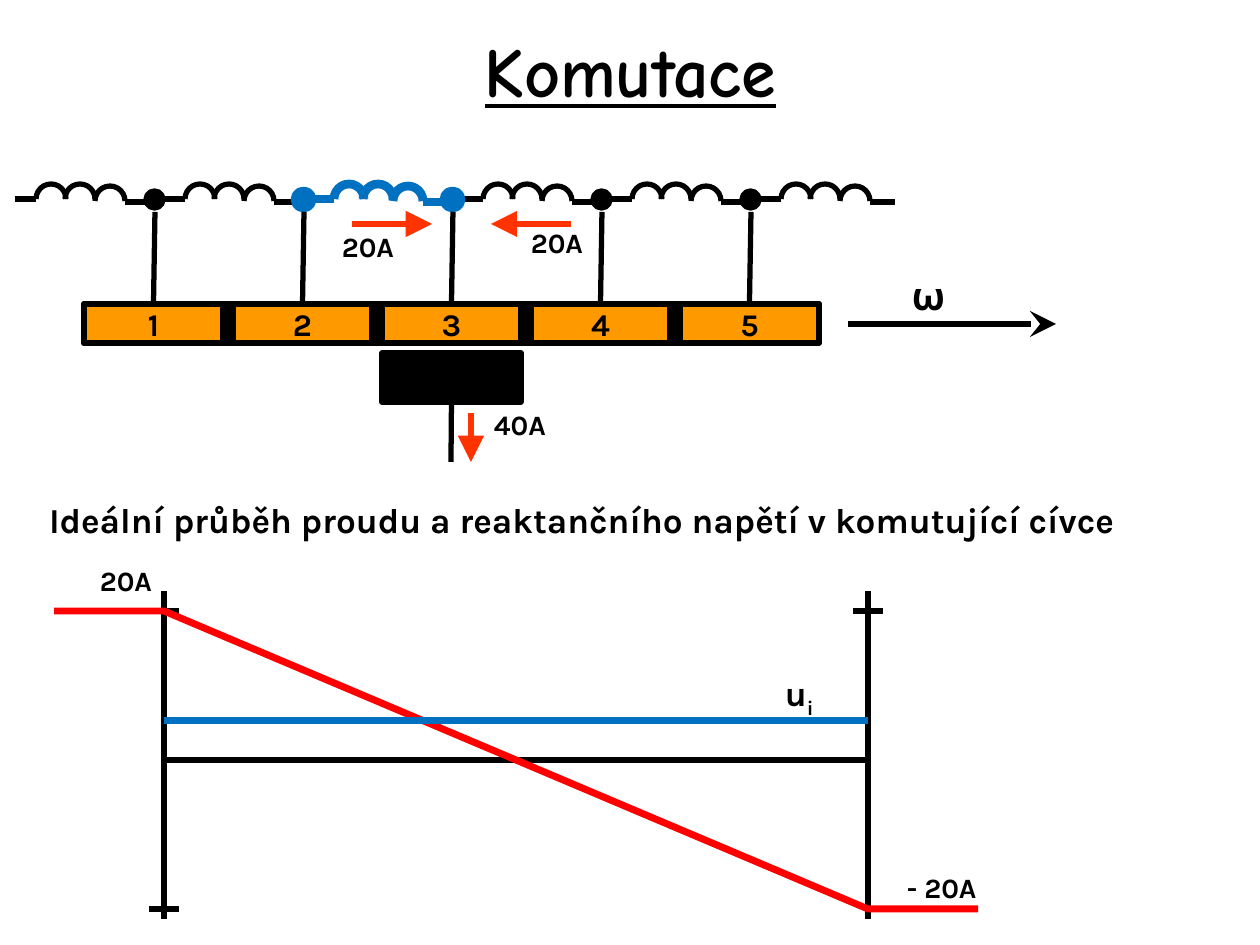
from dataclasses import dataclass

from lxml import etree
from pptx import Presentation
from pptx.dml.color import RGBColor
from pptx.enum.shapes import MSO_CONNECTOR, MSO_SHAPE
from pptx.enum.text import MSO_ANCHOR, MSO_AUTO_SIZE, PP_ALIGN
from pptx.oxml.ns import qn
from pptx.util import Pt

STRAIGHT = MSO_CONNECTOR.STRAIGHT
RECTANGLE, OVAL, ARC = MSO_SHAPE.RECTANGLE, MSO_SHAPE.OVAL, MSO_SHAPE.ARC
MIDDLE, CENTER, LEFT = MSO_ANCHOR.MIDDLE, PP_ALIGN.CENTER, PP_ALIGN.LEFT
GROW = MSO_AUTO_SIZE.SHAPE_TO_FIT_TEXT

BLACK = RGBColor(0x00, 0x00, 0x00)
BLUE = RGBColor(0x00, 0x70, 0xC0)
RED = RGBColor(0xFF, 0x00, 0x00)
ARROW_RED = RGBColor(0xFF, 0x33, 0x00)
ORANGE = RGBColor(0xFF, 0x99, 0x00)

EMU_PER_PX = 914400 / 126
TITLE_FONT, BODY_FONT = "Comic Neue", "Karla"
PITCH = 149
SEGMENT_COUNT = 5
SHORTED_COIL = 2
SHORTED_NODES = (1, 2)
TOP, BOTTOM = 0, 2


@dataclass(frozen=True)
class Line:
    x1: int
    y1: int
    x2: int
    y2: int
    color: RGBColor = BLACK
    width: int = 3
    head: str = ""


@dataclass(frozen=True)
class Label:
    text: str
    left: int
    top: int
    width: int
    height: int
    size: int = 16
    wrap: bool = False
    subscript: str = ""


AXIS_LEFT, AXIS_RIGHT = 164, 868
CURRENT_TOP, CURRENT_BOTTOM = 611, 909

GRAPH_LINES = [
    Line(AXIS_LEFT, 591, AXIS_LEFT, 919),
    Line(AXIS_RIGHT, 591, AXIS_RIGHT, 919),
    Line(AXIS_LEFT, 760, AXIS_RIGHT, 760),
    Line(AXIS_LEFT - 15, CURRENT_TOP, AXIS_LEFT + 15, CURRENT_TOP),
    Line(AXIS_LEFT - 15, CURRENT_BOTTOM, AXIS_LEFT + 15, CURRENT_BOTTOM),
    Line(AXIS_RIGHT - 15, CURRENT_TOP, AXIS_RIGHT + 15, CURRENT_TOP),
]
CURRENT_POINTS = [
    (54, CURRENT_TOP),
    (AXIS_LEFT, CURRENT_TOP),
    (AXIS_RIGHT, CURRENT_BOTTOM),
    (978, CURRENT_BOTTOM),
]
VOLTAGE = Line(AXIS_LEFT, 721, AXIS_RIGHT, 721, BLUE, 4)
ARROWS = [
    Line(471, 413, 471, 462, ARROW_RED, head="triangle"),
    Line(352, 224, 432, 224, ARROW_RED, head="triangle"),
    Line(571, 224, 491, 224, ARROW_RED, head="triangle"),
    Line(848, 324, 1056, 324, head="stealth"),
]
LABELS = [
    Label("40A", 489, 403, 65, 44),
    Label("20A", 337, 224, 65, 44),
    Label("20A", 526, 221, 65, 44),
    Label("20A", 95, 558, 65, 44),
    Label("- 20A", 902, 866, 86, 44),
    Label("ω", 907, 267, 37, 57, 22),
    Label("u", 780, 667, 39, 53, 20, subscript="i"),
    Label("Ideální průběh proudu a reaktančního napětí v komutující cívce",
          44, 493, 1150, 52, 20, wrap=True),
]


def px(length: int) -> int:
    return round(length * EMU_PER_PX)


def format_paragraph(paragraph, size: int, font: str = BODY_FONT, align=LEFT) -> None:
    paragraph.alignment = align
    for run in paragraph.runs:
        run.font.name = font
        run.font.size = Pt(size)
        run.font.bold = True
        run.font.color.rgb = BLACK


def add_line(slide, line: Line):
    ends = (px(value) for value in (line.x1, line.y1, line.x2, line.y2))
    connector = slide.shapes.add_connector(STRAIGHT, *ends)
    connector.line.color.rgb = line.color
    connector.line.width = Pt(line.width)
    if line.head:
        etree.SubElement(connector.line._get_or_add_ln(), qn("a:tailEnd"),
                         type=line.head, w="lg", len="lg")
    etree.SubElement(connector._element.spPr, qn("a:effectLst"))
    return connector


def style_shape(shape, fill: RGBColor | None, color: RGBColor, width: int) -> None:
    shape.shadow.inherit = False
    if fill is None:
        shape.fill.background()
    else:
        shape.fill.solid()
        shape.fill.fore_color.rgb = fill
    shape.line.color.rgb = color
    shape.line.width = Pt(width)


def add_shape(slide, kind, box: tuple[int, int, int, int], fill: RGBColor | None,
              color: RGBColor = BLACK, width: int = 3):
    shape = slide.shapes.add_shape(kind, *(px(value) for value in box))
    style_shape(shape, fill, color, width)
    return shape


def add_label(slide, label: Label) -> None:
    box = slide.shapes.add_textbox(px(label.left), px(label.top),
                                   px(label.width), px(label.height))
    frame = box.text_frame
    frame.margin_left = frame.margin_right = px(5)
    frame.margin_top = frame.margin_bottom = px(5)
    frame.word_wrap = label.wrap
    frame.auto_size = GROW
    frame.text = label.text
    paragraph = frame.paragraphs[0]
    if label.subscript:
        run = paragraph.add_run()
        run.text = label.subscript
        run.font._element.set("baseline", "-25000")
    format_paragraph(paragraph, label.size)


def add_title(slide) -> None:
    box = slide.shapes.add_textbox(px(25), px(16), px(1211), px(107))
    frame = box.text_frame
    frame.word_wrap = True
    frame.vertical_anchor = MIDDLE
    frame.text = "Komutace"
    format_paragraph(frame.paragraphs[0], 40, TITLE_FONT, CENTER)
    frame.paragraphs[0].runs[0].font.underline = True


def add_coil(slide, left: int, color: RGBColor, width: int) -> None:
    """Draw a lead, three half-circle turns and a slightly lower lead."""
    add_line(slide, Line(left, 199, left + 21, 199, color, width))
    for offset, top in ((21, 184), (50, 184), (80, 186)):
        turn = add_shape(slide, ARC, (left + offset, top, 30, 30), None, color, width)
        turn.adjustments[0] = 108  # 180 degrees
        turn.adjustments[1] = 0
    add_line(slide, Line(left + 110, 202, left + 135, 202, color, width))


def add_segment(slide, index: int):
    segment = add_shape(slide, RECTANGLE, (84 + index * PITCH, 304, 139, 39), ORANGE)
    frame = segment.text_frame
    frame.word_wrap = False
    frame.vertical_anchor = MIDDLE
    frame.text = str(index + 1)
    format_paragraph(frame.paragraphs[0], 18, align=CENTER)
    return segment


def add_commutator(slide) -> None:
    brush = add_shape(slide, RECTANGLE, (382, 353, 139, 49), BLACK)
    add_line(slide, Line(451, 402, 451, 462)).begin_connect(brush, BOTTOM)
    add_shape(slide, RECTANGLE, (84, 304, 735, 39), BLACK)
    for index in range(SEGMENT_COUNT + 1):
        shorted = index == SHORTED_COIL
        add_coil(slide, 15 + index * PITCH, BLUE if shorted else BLACK, 5 if shorted else 3)
    for index in range(SEGMENT_COUNT):
        shift = index * PITCH
        shorted = index in SHORTED_NODES
        color = BLUE if shorted else BLACK
        segment = add_segment(slide, index)
        add_shape(slide, OVAL, (146 + shift, 191, 17, 17), color, color, 5 if shorted else 3)
        riser = add_line(slide, Line(155 + shift, 212, 154 + shift, 304))
        riser.end_connect(segment, TOP)


def add_graph(slide) -> None:
    for line in GRAPH_LINES:
        add_line(slide, line)
    builder = slide.shapes.build_freeform(*CURRENT_POINTS[0], scale=EMU_PER_PX)
    builder.add_line_segments(CURRENT_POINTS[1:], close=False)
    style_shape(builder.convert_to_shape(), None, RED, 4)
    add_line(slide, VOLTAGE)


def main() -> None:
    presentation = Presentation()
    presentation.slide_width, presentation.slide_height = px(1260), px(945)
    slide = presentation.slides.add_slide(presentation.slide_layouts[6])
    add_title(slide)
    add_commutator(slide)
    add_graph(slide)
    for arrow in ARROWS:
        add_line(slide, arrow)
    for label in LABELS:
        add_label(slide, label)
    presentation.save("out.pptx")


if __name__ == "__main__":
    main()
